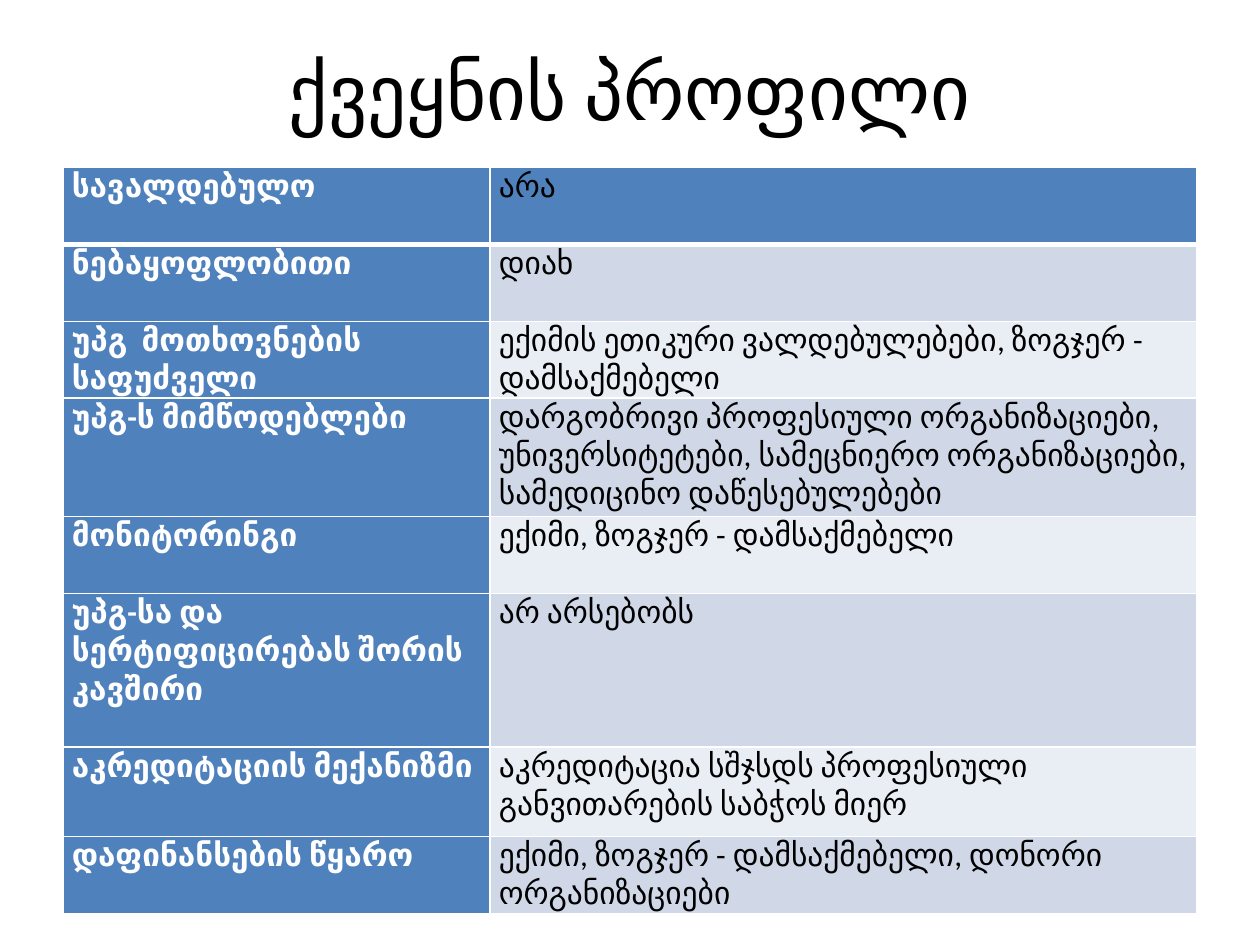
from lxml import etree
from pptx import Presentation
from pptx import util as u
from pptx.dml.color import RGBColor
from pptx.enum import text
from pptx.oxml import ns

COLORS = {
    "ink": "000000",
    "white": "FFFFFF",
    "header": "4F81BD",
    "band_dark": "D0D8E8",
    "band_light": "E9EDF4",
}

# Label, answer, row height in inches
PROFILE = [
    ("სავალდებულო", "არა", 0.61),
    ("ნებაყოფლობითი", "დიახ", 0.61),
    ("უპგ  მოთხოვნების საფუძველი",
     "ექიმის ეთიკური ვალდებულებები, ზოგჯერ - დამსაქმებელი", 0.61),
    ("უპგ-ს მიმწოდებლები",
     "დარგობრივი პროფესიული ორგანიზაციები, უნივერსიტეტები, "
     "სამეცნიერო ორგანიზაციები, სამედიცინო დაწესებულებები", 0.94),
    ("მონიტორინგი", "ექიმი, ზოგჯერ - დამსაქმებელი", 0.61),
    ("უპგ-სა და სერტიფიცირებას შორის კავშირი", "არ არსებობს", 1.22),
    ("აკრედიტაციის მექანიზმი",
     "აკრედიტაცია სშჯსდს პროფესიული განვითარების საბჭოს მიერ", 0.71),
    ("დაფინანსების წყარო",
     "ექიმი, ზოგჯერ - დამსაქმებელი, დონორი ორგანიზაციები", 0.61),
]
COLUMN_WIDTHS = (3.39, 5.61)


def write(frame, words, size=18, color="ink", bold=False, align=text.PP_ALIGN.LEFT):
    para = frame.paragraphs[0]
    para.alignment = align
    span = para.add_run()
    span.text = words
    span.font.name = "Calibri"
    span.font.size = u.Pt(size)
    span.font.bold = bold
    span.font.color.rgb = RGBColor.from_string(COLORS[color])


def set_borders(cell, **widths):
    """Draw white cell borders; widths are points by side: L, R, T, B."""
    properties = cell._tc.get_or_add_tcPr()
    for position, side in enumerate("LRTB"):
        line = etree.Element(ns.qn(f"a:ln{side}"), w=str(u.Pt(widths.get(side, 1))))
        fill = etree.SubElement(line, ns.qn("a:solidFill"))
        etree.SubElement(fill, ns.qn("a:srgbClr"), val=COLORS["white"])
        properties.insert(position, line)


class ProfileSlide:
    def __init__(self, deck):
        self.page = deck.slides.add_slide(deck.slide_layouts[6])

    def title(self, words, left, top, width, height):
        box = self.page.shapes.add_textbox(*map(u.Inches, (left, top, width, height)))
        frame = box.text_frame
        frame.word_wrap = True
        frame.vertical_anchor = text.MSO_ANCHOR.MIDDLE
        write(frame, words, size=44, align=text.PP_ALIGN.CENTER)

    def cell(self, cell, words, fill, borders, **style):
        cell.margin_left = cell.margin_right = u.Inches(0.07)
        cell.margin_top = cell.margin_bottom = 0
        cell.fill.solid()
        cell.fill.fore_color.rgb = RGBColor.from_string(COLORS[fill])
        set_borders(cell, **borders)
        write(cell.text_frame, words, **style)

    def table(self, rows, left, top):
        width, height = sum(COLUMN_WIDTHS), sum(row[2] for row in rows)
        table = self.page.shapes.add_table(
            len(rows), len(COLUMN_WIDTHS),
            *map(u.Inches, (left, top, width, height))).table
        table.first_col = True
        for column, column_width in zip(table.columns, COLUMN_WIDTHS):
            column.width = u.Inches(column_width)
        for index, (label, answer, row_height) in enumerate(rows):
            table.rows[index].height = u.Inches(row_height)
            # The first row is a header; the answers below it alternate
            band = "band_dark" if index % 2 else "band_light"
            answer_fill = band if index else "header"
            # A thick rule parts the header from the body
            borders = {0: {"B": 3}, 1: {"T": 3}}.get(index, {})
            self.cell(table.cell(index, 0), label, "header", borders,
                      color="white", bold=True)
            self.cell(table.cell(index, 1), answer, answer_fill, borders)


def main():
    deck = Presentation()
    deck.slide_width, deck.slide_height = u.Inches(10), u.Inches(7.5)
    slide = ProfileSlide(deck)
    slide.title("ქვეყნის პროფილი", 0.75, 0.25, 8.5, 0.92)
    slide.table(PROFILE, 0.5, 1.33)
    deck.save("out.pptx")


if __name__ == "__main__":
    main()
